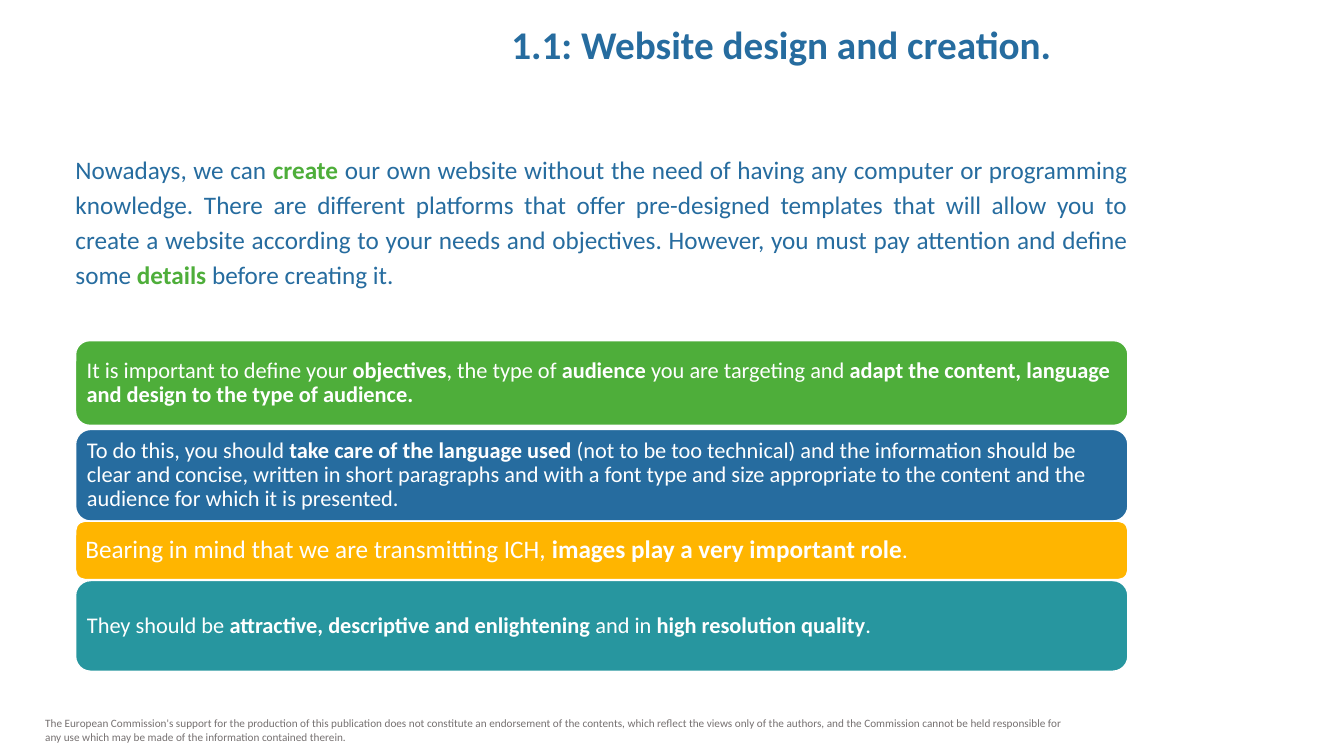
from dataclasses import dataclass
from typing import Optional

from pptx import Presentation
from pptx.dml.color import RGBColor
from pptx.enum.shapes import MSO_SHAPE
from pptx.enum.text import MSO_ANCHOR, MSO_AUTO_SIZE, PP_ALIGN
from pptx.slide import Slide
from pptx.text.text import TextFrame
from pptx.util import Pt


@dataclass(frozen=True)
class Theme:
    font: str = "Calibri"
    blue: str = "266C9F"
    green: str = "4EAE3A"
    amber: str = "FFB500"
    teal: str = "27969F"
    white: str = "FFFFFF"
    grey: str = "767171"
    title: float = 28
    body: float = 18
    band: float = 16
    footer: float = 8


THEME = Theme()


@dataclass(frozen=True)
class Box:
    left: float
    top: float
    width: float
    height: float

    def lengths(self) -> tuple[Pt, Pt, Pt, Pt]:
        return Pt(self.left), Pt(self.top), Pt(self.width), Pt(self.height)


@dataclass(frozen=True)
class Span:
    text: str
    bold: bool = False
    color: Optional[str] = None
    size: Optional[float] = None


@dataclass(frozen=True)
class Band:
    top: float
    height: float
    fill: str
    spans: tuple[Span, ...]
    size: float = THEME.band


# Content
TITLE = Span("1.1: Website design and creation.", bold=True)

INTRO = (
    Span("Nowadays, we can "),
    Span("create", bold=True, color=THEME.green),
    Span(" our own website without the need of having any computer or programming "
         "knowledge. There are different platforms that offer pre-designed templates "
         "that will allow you to create a website according to your needs and "
         "objectives. However, you must pay attention and define some "),
    Span("details", bold=True, color=THEME.green),
    Span(" before creating it."),
)

BANDS = (
    Band(243.36, 60.48, THEME.green, (
        Span("It is important to define your "),
        Span("objectives", bold=True),
        Span(", the type of "),
        Span("audience", bold=True),
        Span(" you are targeting and "),
        Span("adapt the content, language and design to the type of audience.", bold=True),
    )),
    Band(306.72, 65.52, THEME.blue, (
        Span("To do this, you should "),
        Span("take care of the language used ", bold=True),
        Span("(not to be too technical) and the information should be clear and concise, "
             "written in short paragraphs and with a font type and size appropriate to "
             "the content and the audience for which it is presented."),
    )),
    Band(372.24, 41.76, THEME.amber, (
        Span("Bearing in mind that we are transmitting ICH, "),
        Span("images play a very important role", bold=True),
        Span(".", size=THEME.band),
    ), size=THEME.body),
    Band(414.72, 64.8, THEME.teal, (
        Span("They should be "),
        Span("attractive, descriptive and enlightening ", bold=True),
        Span("and in "),
        Span("high resolution quality", bold=True),
        Span("."),
    )),
)

FOOTER = Span(
    "The European Commission's support for the production of this publication does not "
    "constitute an endorsement of the contents, which reflect the views only of the "
    "authors, and the Commission cannot be held responsible for any use which may be "
    "made of the information contained therein.")

# Layout, in points
TITLE_BOX = Box(175, 5.6, 766, 56.8)
INTRO_BOX = Box(46.8, 103.7, 766, 105.8)
FOOTER_BOX = Box(25.2, 508.3, 753, 26.6)
BAND_LEFT, BAND_WIDTH, BAND_INSET = 54, 751.7, 5


def write(frame: TextFrame, spans: tuple[Span, ...], size: float, color: str,
          frame_format: dict, paragraph_format: dict) -> None:
    """Fill a frame with one paragraph of formatted spans."""
    for name, value in {"word_wrap": True, **frame_format}.items():
        setattr(frame, name, value)
    paragraph = frame.paragraphs[0]
    for name, value in paragraph_format.items():
        setattr(paragraph, name, value)
    for span in spans:
        run = paragraph.add_run()
        run.text = span.text
        font_format = {"name": THEME.font, "size": Pt(span.size or size), "bold": span.bold}
        for name, value in font_format.items():
            setattr(run.font, name, value)
        run.font.color.rgb = RGBColor.from_string(span.color or color)


def draw_title(slide: Slide) -> None:
    title = slide.shapes.title
    title.left, title.top, title.width, title.height = TITLE_BOX.lengths()
    write(title.text_frame, (TITLE,), THEME.title, THEME.blue,
          {"vertical_anchor": MSO_ANCHOR.TOP, "auto_size": MSO_AUTO_SIZE.NONE},
          {"alignment": PP_ALIGN.CENTER, "line_spacing": 1.15})


def draw_text(slide: Slide, box: Box, spans: tuple[Span, ...], size: float,
              color: str, paragraph_format: dict) -> None:
    text_box = slide.shapes.add_textbox(*box.lengths())
    write(text_box.text_frame, spans, size, color, {}, paragraph_format)


def draw_band(slide: Slide, band: Band) -> None:
    box = Box(BAND_LEFT, band.top, BAND_WIDTH, band.height)
    panel = slide.shapes.add_shape(MSO_SHAPE.ROUNDED_RECTANGLE, *box.lengths())
    panel.shadow.inherit = False
    panel.fill.solid()
    panel.fill.fore_color.rgb = RGBColor.from_string(band.fill)
    panel.line.color.rgb = RGBColor.from_string(THEME.white)
    panel.line.width = Pt(1)
    insets = {f"margin_{side}": Pt(BAND_INSET) for side in ("left", "top", "right", "bottom")}
    write(panel.text_frame, band.spans, band.size, THEME.white,
          {"vertical_anchor": MSO_ANCHOR.MIDDLE, **insets},
          {"alignment": PP_ALIGN.LEFT, "line_spacing": 0.9})


def main() -> None:
    deck = Presentation()
    deck.slide_width, deck.slide_height = Pt(960), Pt(540)
    slide = deck.slides.add_slide(deck.slide_layouts.get_by_name("Title Only"))

    # Heading and introduction
    draw_title(slide)
    draw_text(slide, INTRO_BOX, INTRO, THEME.body, THEME.blue,
              {"alignment": PP_ALIGN.JUSTIFY, "line_spacing": 1.15})

    # Advice bands
    for band in BANDS:
        draw_band(slide, band)

    # Disclaimer
    draw_text(slide, FOOTER_BOX, (FOOTER,), THEME.footer, THEME.grey, {})
    deck.save("out.pptx")


if __name__ == "__main__":
    main()
